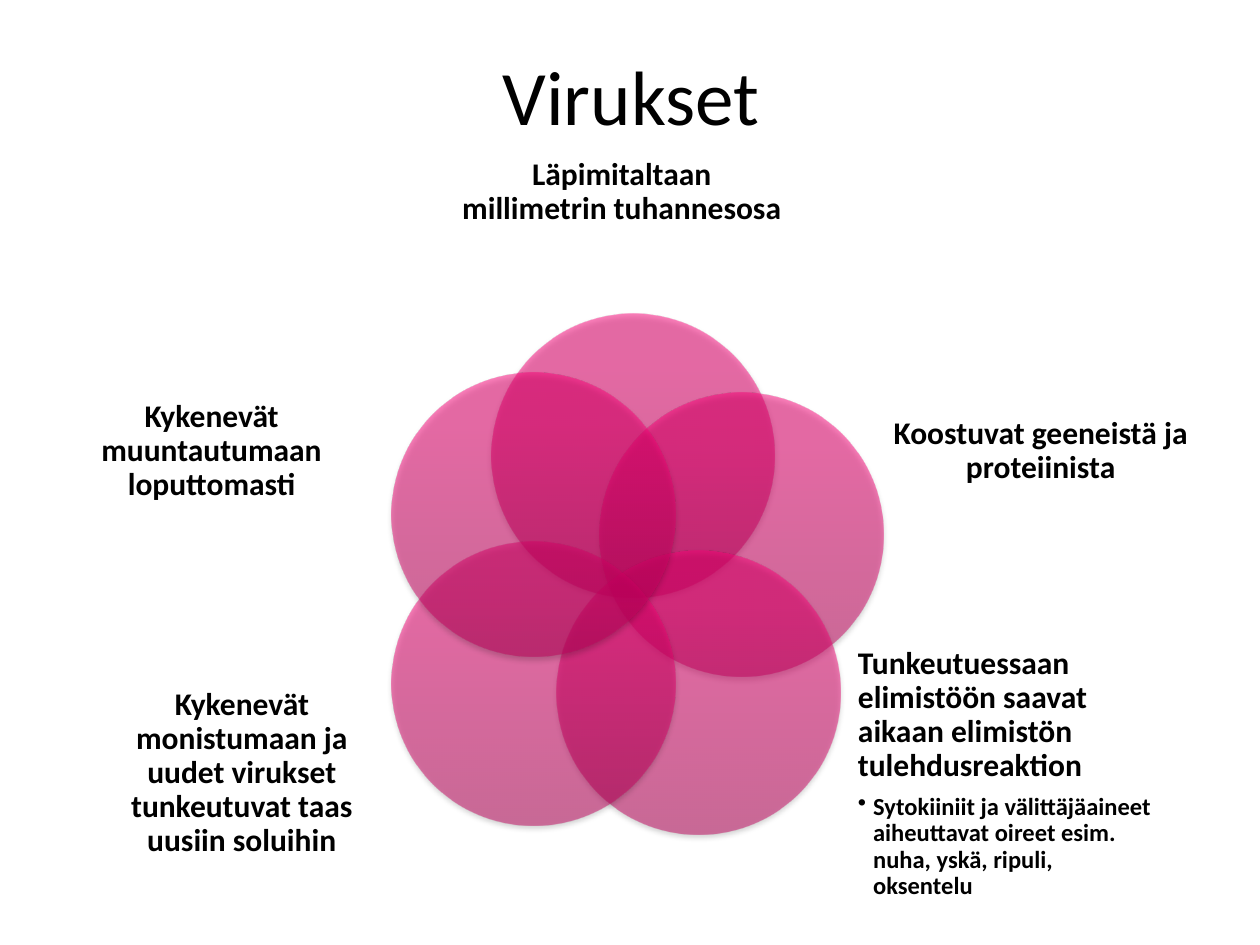
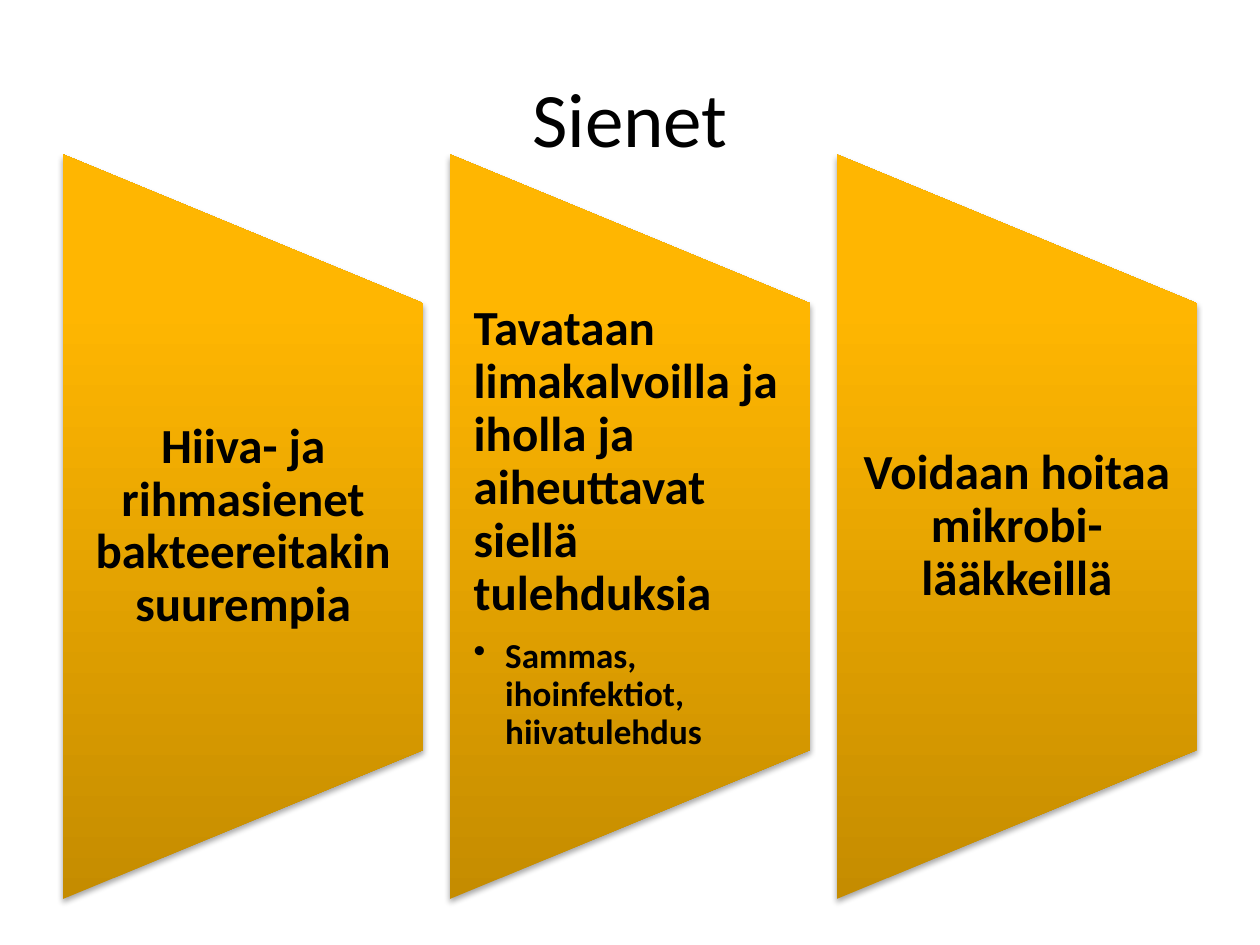
from dataclasses import dataclass

from lxml.etree import SubElement
from pptx import Presentation
from pptx.dml.color import RGBColor
from pptx.enum.shapes import MSO_SHAPE
from pptx.enum.text import MSO_ANCHOR, PP_ALIGN
from pptx.oxml.ns import qn
from pptx.util import Inches, Pt

COLORS = {
    "text": "000000",
    "pink_dark": "BE005A",
    "pink_mid": "F70075",
    "pink_light": "F80076",
    "amber_dark": "C58C00",
    "amber_mid": "FFB601",
    "amber_light": "FFB602",
}
FONT = "Calibri"
WIDTH, HEIGHT = Inches(10), Inches(7.5)
STOPS = (0, 80, 100)
TITLE_ONLY = 5


@dataclass
class Box:
    """Left, top, width and height in percent of the slide."""
    x: float
    y: float
    w: float
    h: float

    def emu(self) -> tuple[int, int, int, int]:
        return (int(self.x * WIDTH / 100), int(self.y * HEIGHT / 100),
                int(self.w * WIDTH / 100), int(self.h * HEIGHT / 100))


@dataclass
class TextStyle:
    size: int
    sub_size: int
    sub_indent: float
    inset: float = 0


@dataclass
class Label:
    text: str
    sub: str = ""


@dataclass
class Petal:
    x: float
    y: float
    box: Box
    label: Label


VIRUS_STYLE = TextStyle(18, 14, 0.12)
FUNGUS_STYLE = TextStyle(28, 20, 0.25, 0.19)
PETAL_W, PETAL_H = 22.5, 30
LABEL_W, LABEL_H = 23.4, 21.87
UPPER, LOWER = 36.8, 70.93

PETALS = [
    Petal(39, 33.2, Box(36.3, 10.27, 26.1, 20.13),
          Label("Läpimitaltaan millimetrin tuhannesosa")),
    Petal(47.6, 41.6, Box(70.9, UPPER, LABEL_W, LABEL_H),
          Label("Koostuvat geeneistä ja proteiinista")),
    Petal(44.2, 58.27, Box(68.1, LOWER, LABEL_W, LABEL_H),
          Label("Tunkeutuessaan elimistöön saavat aikaan elimistön tulehdusreaktion",
                "Sytokiiniit ja välittäjäaineet aiheuttavat oireet esim. nuha, yskä, "
                "ripuli, oksentelu")),
    Petal(31.1, 57.33, Box(7.5, LOWER, LABEL_W, LABEL_H),
          Label("Kykenevät monistumaan ja uudet virukset tunkeutuvat taas uusiin soluihin")),
    Petal(31.1, 39.47, Box(5.1, UPPER, LABEL_W, LABEL_H),
          Label("Kykenevät muuntautumaan loputtomasti")),
]

PANELS = [
    Label("Hiiva- ja rihmasienet bakteereitakin suurempia"),
    Label("Tavataan limakalvoilla ja iholla ja aiheuttavat siellä tulehduksia",
          "Sammas, ihoinfektiot, hiivatulehdus"),
    Label("Voidaan hoitaa mikrobi-lääkkeillä"),
]
PANEL_X, PANEL_STEP, PANEL_W = 5, 30.7, 28.6


def add_color(parent, color: str, alpha: int) -> None:
    clr = SubElement(parent, qn("a:srgbClr"), val=COLORS[color])
    if alpha < 100:
        SubElement(clr, qn("a:alpha"), val=str(alpha * 1000))


def style_shape(sp, hue: str, alpha: int) -> None:
    sp.line.fill.background()
    sp.shadow.inherit = False
    sp.fill.gradient()
    pr = sp._element.spPr
    grad = pr.find(qn("a:gradFill"))
    grad.set("rotWithShape", "0")
    for child in list(grad):
        grad.remove(child)
    stops = SubElement(grad, qn("a:gsLst"))
    for pos, tone in zip(STOPS, ("dark", "mid", "light")):
        add_color(SubElement(stops, qn("a:gs"), pos=str(pos * 1000)),
                  f"{hue}_{tone}", alpha)
    SubElement(grad, qn("a:lin"), ang=str(270 * 60000), scaled="0")
    shadow = SubElement(pr.find(qn("a:effectLst")), qn("a:outerShdw"),
                        blurRad=str(Pt(3.1)), dist=str(Pt(1.8)),
                        dir=str(90 * 60000), rotWithShape="0")
    add_color(shadow, "text", 35)


def format_font(p, size: int, bold: bool) -> None:
    for r in p.runs:
        r.font.name = FONT
        r.font.size = Pt(size)
        r.font.bold = bold
        r.font.color.rgb = RGBColor.from_string(COLORS["text"])


def add_label(s, box: Box, label: Label, style: TextStyle,
              anchor: MSO_ANCHOR = MSO_ANCHOR.MIDDLE) -> None:
    tf = s.shapes.add_textbox(*box.emu()).text_frame
    tf.word_wrap = True
    tf.vertical_anchor = anchor
    tf.margin_left = tf.margin_right = Inches(style.inset)
    tf.margin_top = tf.margin_bottom = 0
    p = tf.paragraphs[0]
    p.text = label.text
    p.alignment = PP_ALIGN.LEFT if label.sub else PP_ALIGN.CENTER
    p.line_spacing = 0.9
    p.space_after = Pt(style.size * 0.35)
    format_font(p, style.size, True)
    if label.sub:
        p = tf.add_paragraph()
        p.text = label.sub
        p.level = 1
        pr = p._p.get_or_add_pPr()
        pr.set("marL", str(Inches(style.sub_indent)))
        pr.set("indent", str(-Inches(style.sub_indent)))
        SubElement(pr, qn("a:buChar"), char="•")
        p.line_spacing = 0.9
        p.space_after = Pt(style.sub_size * 0.15)
        format_font(p, style.sub_size, True)


def add_slide(prs, title: str, box: Box):
    s = prs.slides.add_slide(prs.slide_layouts[TITLE_ONLY])
    sp = s.shapes.title
    sp.left, sp.top, sp.width, sp.height = box.emu()
    tf = sp.text_frame
    tf.text = title
    tf.vertical_anchor = MSO_ANCHOR.MIDDLE
    tf.paragraphs[0].alignment = PP_ALIGN.CENTER
    format_font(tf.paragraphs[0], 44, False)
    return s


def add_petal(s, petal: Petal) -> None:
    box = Box(petal.x, petal.y, PETAL_W, PETAL_H)
    style_shape(s.shapes.add_shape(MSO_SHAPE.OVAL, *box.emu()), "pink", 50)
    add_label(s, petal.box, petal.label, VIRUS_STYLE)


def add_panel(s, x: float, label: Label) -> None:
    left, top, w, h = Box(x, 16.33, PANEL_W, 78.8).emu()
    sp = s.shapes.add_shape(MSO_SHAPE.FLOWCHART_MANUAL_OPERATION,
                            left + (w - h) // 2, top + (h - w) // 2, h, w)
    sp.rotation = 270
    style_shape(sp, "amber", 100)
    anchor = MSO_ANCHOR.TOP if label.sub else MSO_ANCHOR.MIDDLE
    add_label(s, Box(x, 32.13, PANEL_W, 47.2), label, FUNGUS_STYLE, anchor)


def main() -> None:
    prs = Presentation()
    prs.slide_width, prs.slide_height = WIDTH, HEIGHT
    s = add_slide(prs, "Virukset", Box(5.1, 2.8, 90, 14.53))
    for petal in PETALS:
        add_petal(s, petal)
    s = add_slide(prs, "Sienet", Box(5, 4, 90, 16.67))
    for i, label in enumerate(PANELS):
        add_panel(s, PANEL_X + i * PANEL_STEP, label)
    prs.save("out.pptx")


if __name__ == "__main__":
    main()
